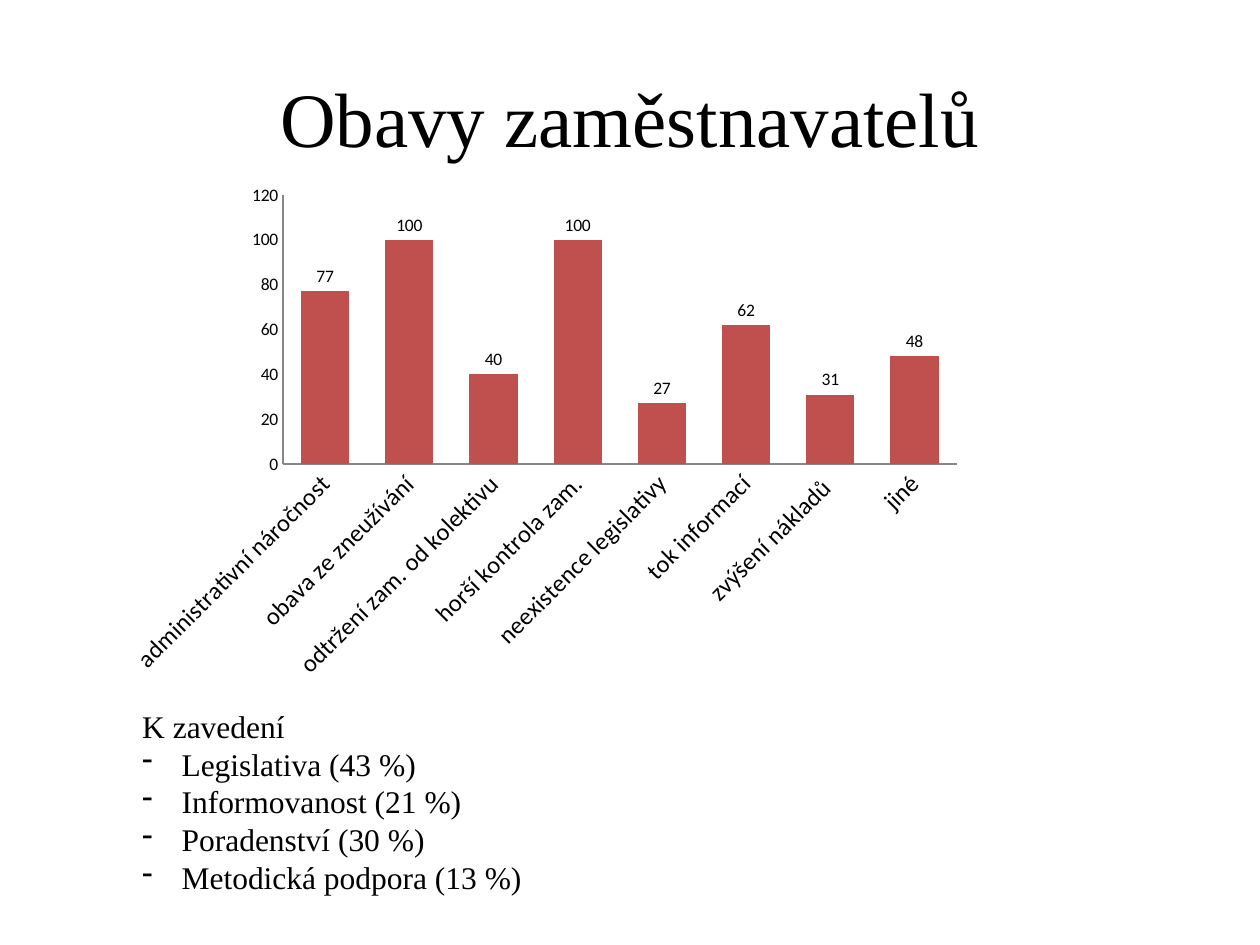
from dataclasses import dataclass

from lxml import etree
from pptx import Presentation
from pptx import util as u
from pptx.chart.data import CategoryChartData
from pptx.dml.color import RGBColor
from pptx.enum import chart as charts
from pptx.enum import text
from pptx.oxml import parse_xml
from pptx.oxml.ns import nsdecls, qn

Pt = u.Pt
BLACK = RGBColor(0x00, 0x00, 0x00)
BAR_RED = RGBColor(0xC0, 0x50, 0x4D)
AXIS_GRAY = RGBColor(0x87, 0x87, 0x87)
SERIF = "Times New Roman"
SANS = "Calibri"
BULLET_INDENT = Pt(22.5)


@dataclass(frozen=True)
class Box:
    left: float
    top: float
    width: float
    height: float

    def lengths(self):
        return Pt(self.left), Pt(self.top), Pt(self.width), Pt(self.height)


@dataclass(frozen=True)
class Line:
    wording: str
    size: float = 18
    bullet: str = ""
    alignment: text.PP_ALIGN = text.PP_ALIGN.LEFT


@dataclass(frozen=True)
class Concern:
    label: str
    value: int


CONCERNS = [
    Concern("administrativní náročnost", 77),
    Concern("obava ze zneužívání", 100),
    Concern("odtržení zam. od kolektivu", 40),
    Concern("horší kontrola zam.", 100),
    Concern("neexistence legislativy", 27),
    Concern("tok informací", 62),
    Concern("zvýšení nákladů ", 31),
    Concern("jiné", 48),
]

TITLE = [Line("Obavy zaměstnavatelů", 44, alignment=text.PP_ALIGN.CENTER)]
NEEDS = [
    Line("K zavedení"),
    Line("Legislativa (43 %)", bullet="-"),
    Line("Informovanost (21 %)", bullet="-"),
    Line("Poradenství (30 %)", bullet="-"),
    Line("Metodická podpora (13 %)", bullet="-"),
]


def add_text(slide, box: Box, lines: list[Line], anchor: text.MSO_ANCHOR) -> None:
    frame = slide.shapes.add_textbox(*box.lengths()).text_frame
    frame.word_wrap = True
    frame.vertical_anchor = anchor
    for index, line in enumerate(lines):
        paragraph = frame.add_paragraph() if index else frame.paragraphs[0]
        paragraph.text = line.wording
        paragraph.alignment = line.alignment
        paragraph.font.name = SERIF
        paragraph.font.size = Pt(line.size)
        paragraph.font.color.rgb = BLACK
        if line.bullet:
            add_bullet(paragraph, line.bullet)


def add_bullet(paragraph, character: str) -> None:
    properties = paragraph._p.get_or_add_pPr()
    properties.set("marL", str(BULLET_INDENT))
    properties.set("indent", str(-BULLET_INDENT))
    bullet = etree.Element(qn("a:buChar"), char=character)
    defaults = properties.find(qn("a:defRPr"))
    if defaults is None:
        properties.append(bullet)
    else:
        defaults.addprevious(bullet)


def style_axis(axis, size: float) -> None:
    axis.has_major_gridlines = False
    axis.major_tick_mark = charts.XL_TICK_MARK.NONE
    axis.minor_tick_mark = charts.XL_TICK_MARK.NONE
    axis.format.line.color.rgb = AXIS_GRAY
    axis.format.line.width = Pt(0.75)
    axis.tick_labels.font.size = Pt(size)


def set_plot_layout(chart, x: float, y: float, w: float, h: float) -> None:
    """Place the inner plot area, in fractions of the chart."""
    area = chart._chartSpace.chart.plotArea
    for layout in area.findall(qn("c:layout")):
        area.remove(layout)
    area.insert(0, parse_xml(
        f'<c:layout {nsdecls("c")}><c:manualLayout>'
        '<c:layoutTarget val="inner"/><c:xMode val="edge"/><c:yMode val="edge"/>'
        f'<c:x val="{x}"/><c:y val="{y}"/><c:w val="{w}"/><c:h val="{h}"/>'
        '</c:manualLayout></c:layout>'))


def add_concerns_chart(slide, box: Box, concerns: list[Concern]) -> None:
    data = CategoryChartData()
    data.categories = [concern.label for concern in concerns]
    data.add_series("Series 1", [concern.value for concern in concerns])
    chart = slide.shapes.add_chart(
        charts.XL_CHART_TYPE.COLUMN_CLUSTERED, *box.lengths(), data).chart
    chart.has_title = False
    chart.has_legend = False
    chart.font.name = SANS
    chart.font.size = Pt(10)
    chart.font.color.rgb = BLACK

    # Axes
    style_axis(chart.category_axis, 14)
    body = chart.category_axis._element.find(qn("c:txPr")).find(qn("a:bodyPr"))
    body.set("rot", "-2700000")
    style_axis(chart.value_axis, 10)
    chart.value_axis.minimum_scale = 0
    chart.value_axis.maximum_scale = 120
    chart.value_axis.major_unit = 20
    set_plot_layout(chart, 0.196, 0.039, 0.784, 0.522)

    # Bars and value labels
    plot = chart.plots[0]
    plot.gap_width = 75
    plot.vary_by_categories = False
    series = plot.series[0]
    series.format.fill.solid()
    series.format.fill.fore_color.rgb = BAR_RED
    plot.has_data_labels = True
    plot.data_labels.show_value = True
    plot.data_labels.position = charts.XL_LABEL_POSITION.OUTSIDE_END


def main() -> None:
    presentation = Presentation()
    presentation.slide_width, presentation.slide_height = Pt(720), Pt(540)
    slide = presentation.slides.add_slide(presentation.slide_layouts[6])

    # Title, chart, list of needs
    add_text(slide, Box(36, 21.6, 648, 90), TITLE, text.MSO_ANCHOR.MIDDLE)
    add_concerns_chart(slide, Box(65.5, 100, 491, 294.5), CONCERNS)
    add_text(slide, Box(74.2, 400.3, 612, 116.6), NEEDS, text.MSO_ANCHOR.TOP)

    presentation.save("out.pptx")


if __name__ == "__main__":
    main()
